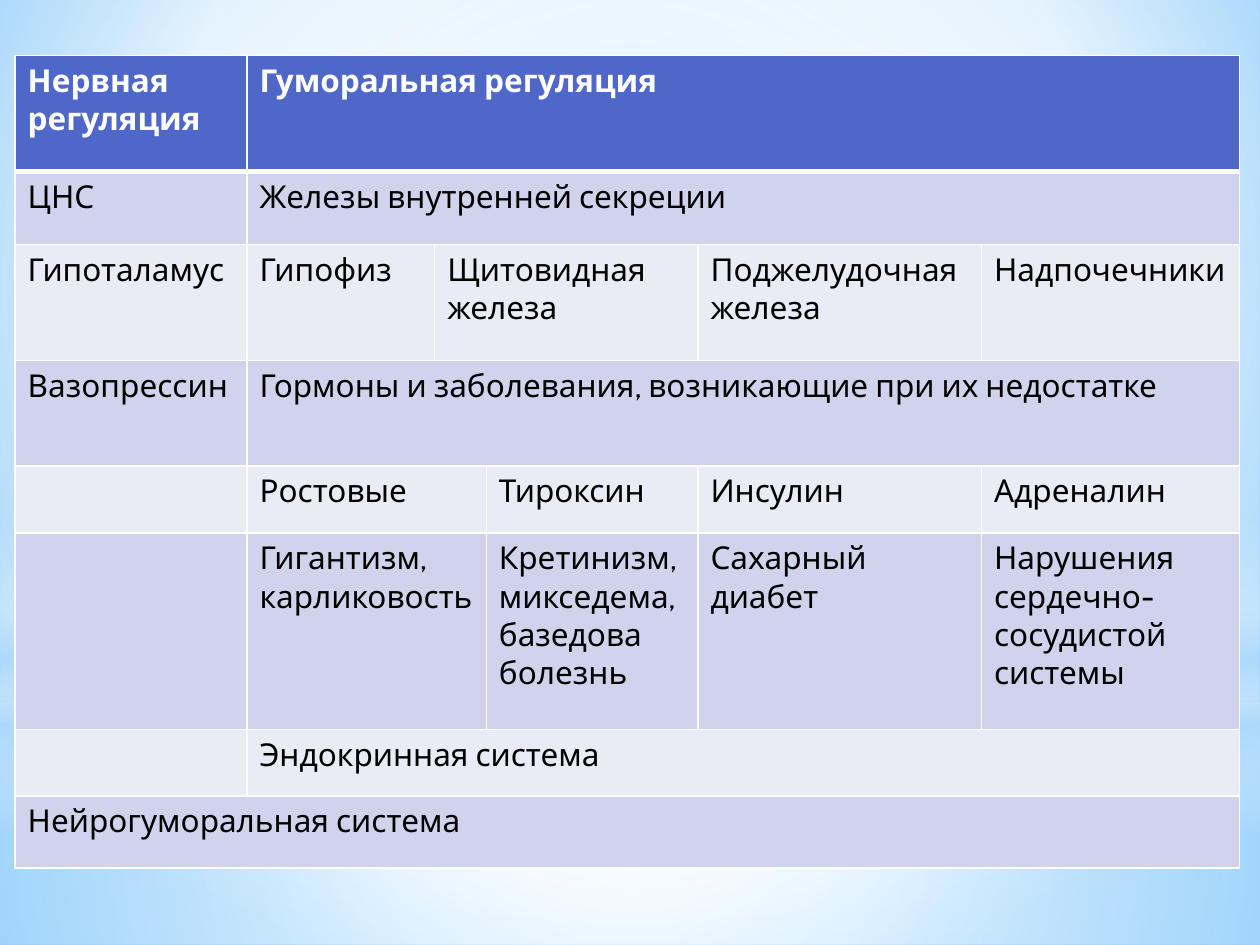
from pptx import Presentation
from pptx.dml.color import RGBColor
from pptx.enum.shapes import MSO_SHAPE
from pptx.oxml.ns import qn
from pptx.util import Inches, Pt
from lxml.etree import SubElement, Element

WIDTH, HEIGHT = 10, 7.5
COLUMNS = [1.84, 1.49, 0.41, 1.68, 2.25, 2.05]
ROWS = [0.92, 0.58, 0.92, 0.84, 0.53, 1.56, 0.53, 0.57]
HEADER, BAND_DARK, BAND_LIGHT = "4E67C8", "D0D3EB", "E9EBF5"
WHITE, BLACK, SKY = "FFFFFF", "000000", "B4DCFA"
CENTER = (50, 50, 50, 50)

# Each entry: first column, columns spanned, paragraphs
CONTENT = [
    [(0, 1, ["Нервная регуляция"]), (1, 5, ["Гуморальная регуляция"])],
    [(0, 1, ["ЦНС"]), (1, 5, ["Железы внутренней секреции"])],
    [(0, 1, ["Гипоталамус"]), (1, 1, ["Гипофиз"]), (2, 2, ["Щитовидная железа"]),
     (4, 1, ["Поджелудочная", "железа"]), (5, 1, ["Надпочечники"])],
    [(0, 1, ["Вазопрессин"]),
     (1, 5, ["Гормоны и заболевания, возникающие при их недостатке"])],
    [(1, 2, ["Ростовые"]), (3, 1, ["Тироксин"]), (4, 1, ["Инсулин"]),
     (5, 1, ["Адреналин"])],
    [(1, 2, ["Гигантизм,\nкарликовость"]),
     (3, 1, ["Кретинизм,\nмикседема,\nбазедова", "болезнь"]),
     (4, 1, ["Сахарный\nдиабет"]),
     (5, 1, ["Нарушения", "сердечно-", "сосудистой", "системы"])],
    [(1, 5, ["Эндокринная система"])],
    [(0, 6, ["Нейрогуморальная система"])],
]


def color(value):
    return RGBColor.from_string(value)


def set_gradient(fill, holder, stops, focus=None):
    fill.solid()
    solid = holder.find(qn("a:solidFill"))
    gradient = Element(qn("a:gradFill"), rotWithShape="1")
    stop_list = SubElement(gradient, qn("a:gsLst"))
    for position, value, opacity in stops:
        stop = SubElement(stop_list, qn("a:gs"), pos=str(position * 1000))
        tint = SubElement(stop, qn("a:srgbClr"), val=value)
        if opacity < 100:
            SubElement(tint, qn("a:alpha"), val=str(opacity * 1000))
    if focus:
        radial = SubElement(gradient, qn("a:path"), path="circle")
        sides = {side: str(share * 1000) for side, share in zip("ltrb", focus)}
        SubElement(radial, qn("a:fillToRect"), **sides)
    else:
        SubElement(gradient, qn("a:lin"), ang="5400000", scaled="0")
    holder.replace(solid, gradient)


def set_background(page):
    fill = page.background.fill
    fill.solid()
    holder = page._element.find(".//" + qn("p:bgPr"))
    stops = [(0, "9ED5FF", 100), (60, WHITE, 100), (100, "5BB9FF", 100)]
    set_gradient(fill, holder, stops, (20, 10, 20, 60))


def add_glow(page, kind, top, height, stops, focus=CENTER):
    shape = page.shapes.add_shape(
        kind, 0, Inches(top), Inches(WIDTH), Inches(height))
    shape.shadow.inherit = False
    shape.line.fill.background()
    set_gradient(shape.fill, shape._element.spPr, stops, focus)


def set_borders(cell, top, bottom):
    properties = cell._tc.get_or_add_tcPr()
    sides = [("L", 1), ("R", 1), ("T", top), ("B", bottom)]
    for index, (side, width) in enumerate(sides):
        line = Element(qn("a:ln" + side), w=str(Pt(width)))
        fill = SubElement(line, qn("a:solidFill"))
        SubElement(fill, qn("a:srgbClr"), val=WHITE)
        properties.insert(index, line)


def style_cell(cell, row):
    band = BAND_DARK if row % 2 else BAND_LIGHT
    cell.fill.solid()
    cell.fill.fore_color.rgb = color(band if row else HEADER)
    set_borders(cell, 3 if row == 1 else 1, 3 if row == 0 else 1)


def write_cell(cell, paragraphs, is_header):
    frame = cell.text_frame
    for index, text in enumerate(paragraphs):
        para = frame.add_paragraph() if index else frame.paragraphs[0]
        for number, line in enumerate(text.split("\n")):
            if number:
                para.add_line_break()
            span = para.add_run()
            span.text = line
            span.font.name = "Cabin"
            span.font.size = Pt(18)
            span.font.bold = is_header
            span.font.color.rgb = color(WHITE if is_header else BLACK)


def add_regulation_table(page):
    table = page.shapes.add_table(
        len(ROWS), len(COLUMNS), Inches(0.12), Inches(0.44),
        Inches(sum(COLUMNS)), Inches(sum(ROWS))).table
    table.first_row = table.horz_banding = False
    for column, width in zip(table.columns, COLUMNS):
        column.width = Inches(width)
    for row, height in enumerate(ROWS):
        table.rows[row].height = Inches(height)
        for cell in table.rows[row].cells:
            style_cell(cell, row)
        for first, count, paragraphs in CONTENT[row]:
            cell = table.cell(row, first)
            if count > 1:
                cell.merge(table.cell(row, first + count - 1))
            write_cell(cell, paragraphs, row == 0)


def main():
    deck = Presentation()
    deck.slide_width, deck.slide_height = Inches(WIDTH), Inches(HEIGHT)
    page = deck.slides.add_slide(deck.slide_layouts[6])
    set_background(page)
    horizon = 5.58
    add_glow(page, MSO_SHAPE.RECTANGLE, horizon, HEIGHT - horizon,
             [(0, WHITE, 91), (37, WHITE, 76), (100, SKY, 79)])
    add_glow(page, MSO_SHAPE.RECTANGLE, 0, horizon,
             [(0, WHITE, 89), (48, WHITE, 62), (100, SKY, 79)])
    add_glow(page, MSO_SHAPE.RECTANGLE, 4.12, HEIGHT / 3,
             [(0, WHITE, 0), (29, WHITE, 30), (45, SKY, 40),
              (55, WHITE, 26), (65, SKY, 60), (100, WHITE, 0)], None)
    add_glow(page, MSO_SHAPE.OVAL, 1.75, horizon,
             [(0, WHITE, 100), (56, WHITE, 0)])
    add_regulation_table(page)
    deck.save("out.pptx")


if __name__ == "__main__":
    main()
